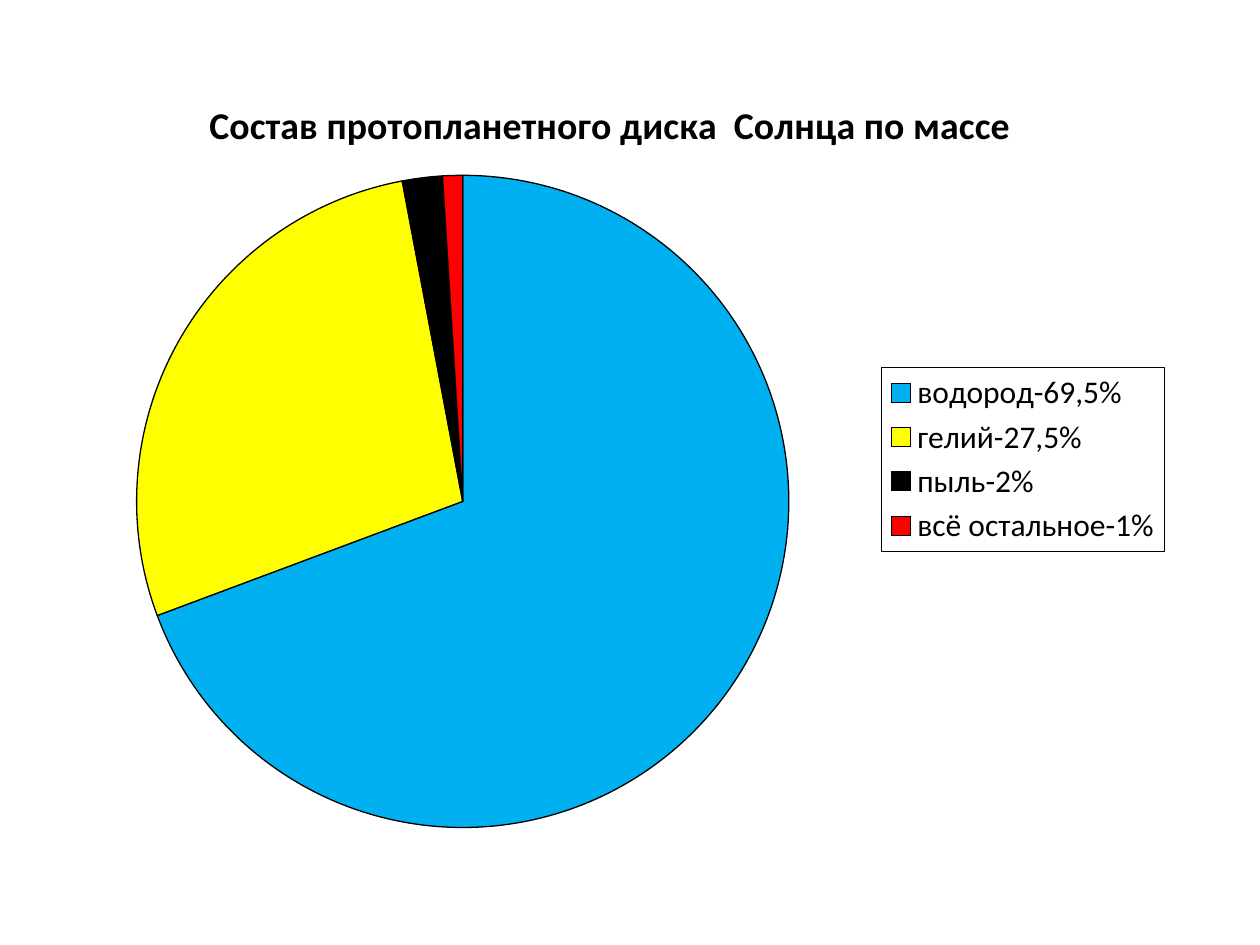
"""Build a slide with a pie chart of the mass composition of the Sun's protoplanetary disk."""

from dataclasses import dataclass

from lxml.etree import SubElement
from pptx import Presentation
from pptx.chart.data import CategoryChartData
from pptx.dml.color import RGBColor
from pptx.enum.chart import XL_CHART_TYPE, XL_LEGEND_POSITION
from pptx.oxml import parse_xml
from pptx.oxml.ns import nsdecls, qn
from pptx.util import Inches, Pt


@dataclass(frozen=True)
class Theme:
    font: str = "Calibri"
    text: str = "000000"
    outline: str = "000000"
    outline_width: float = 0.75
    body_size: float = 18
    title_size: float = 21.6


THEME = Theme()
TITLE = "Состав протопланетного диска  Солнца по массе"
COMPONENTS = [
    ("водород-69,5%", 70, "00B0F0"),
    ("гелий-27,5%", 28, "FFFF00"),
    ("пыль-2%", 2, "000000"),
    ("всё остальное-1%", 1, "FF0000"),
]
CHART_FRAME = (0.35, 0.6, 8.98, 6.09)
TITLE_SHARE = {"x": 0.14, "y": 0.02}
PIE_SHARE = {"x": 0.08, "y": 0.13, "w": 0.58, "h": 0.85}
LEGEND_SHARE = {"x": 0.74, "y": 0.38, "w": 0.25, "h": 0.24}


def style_font(font, size, bold=False):
    font.name = THEME.font
    font.size = Pt(size)
    font.bold = bold
    font.color.rgb = RGBColor.from_string(THEME.text)


def place(element, shares, previous=None, inner=False):
    for old_layout in element.findall(qn("c:layout")):
        element.remove(old_layout)
    layout = parse_xml(f"<c:layout {nsdecls('c')}><c:manualLayout/></c:layout>")
    manual = layout[0]
    if inner:
        SubElement(manual, qn("c:layoutTarget"), val="inner")
    for axis in ("x", "y"):
        SubElement(manual, qn(f"c:{axis}Mode"), val="edge")
    for key, share in shares.items():
        SubElement(manual, qn(f"c:{key}"), val=str(share))
    if previous:
        element.find(qn(previous)).addnext(layout)
    else:
        element.insert(0, layout)


def add_title(chart):
    chart.has_title = True
    run = chart.chart_title.text_frame.paragraphs[0].add_run()
    run.text = TITLE
    style_font(run.font, THEME.title_size, bold=True)
    place(chart.element.chart.find(qn("c:title")), TITLE_SHARE, "c:tx")


def add_legend(chart):
    chart.has_legend = True
    legend = chart.legend
    legend.position = XL_LEGEND_POSITION.RIGHT
    legend.include_in_layout = False
    style_font(legend.font, THEME.body_size)
    element = chart.element.chart.find(qn("c:legend"))
    place(element, LEGEND_SHARE, "c:legendPos")
    border = parse_xml(
        f'<c:spPr {nsdecls("c", "a")}><a:noFill/><a:ln w="{Pt(THEME.outline_width)}">'
        f'<a:solidFill><a:srgbClr val="{THEME.outline}"/></a:solidFill></a:ln></c:spPr>'
    )
    element.find(qn("c:txPr")).addprevious(border)


def style_slices(plot):
    plot.vary_by_categories = True
    for index, (_, _, color) in enumerate(COMPONENTS):
        slice_format = plot.series[0].points[index].format
        slice_format.fill.solid()
        slice_format.fill.fore_color.rgb = RGBColor.from_string(color)
        slice_format.line.color.rgb = RGBColor.from_string(THEME.outline)
        slice_format.line.width = Pt(THEME.outline_width)


def main():
    presentation = Presentation()
    presentation.slide_width = Inches(10)
    presentation.slide_height = Inches(7.5)
    slide = presentation.slides.add_slide(presentation.slide_layouts[6])

    data = CategoryChartData()
    data.categories = [name for name, _, _ in COMPONENTS]
    data.add_series("Series 1", [value for _, value, _ in COMPONENTS])
    frame = [Inches(length) for length in CHART_FRAME]
    chart = slide.shapes.add_chart(XL_CHART_TYPE.PIE, *frame, data).chart
    style_font(chart.font, THEME.body_size)
    add_title(chart)
    add_legend(chart)
    style_slices(chart.plots[0])
    place(chart.element.chart.plotArea, PIE_SHARE, inner=True)
    presentation.save("out.pptx")


if __name__ == "__main__":
    main()
